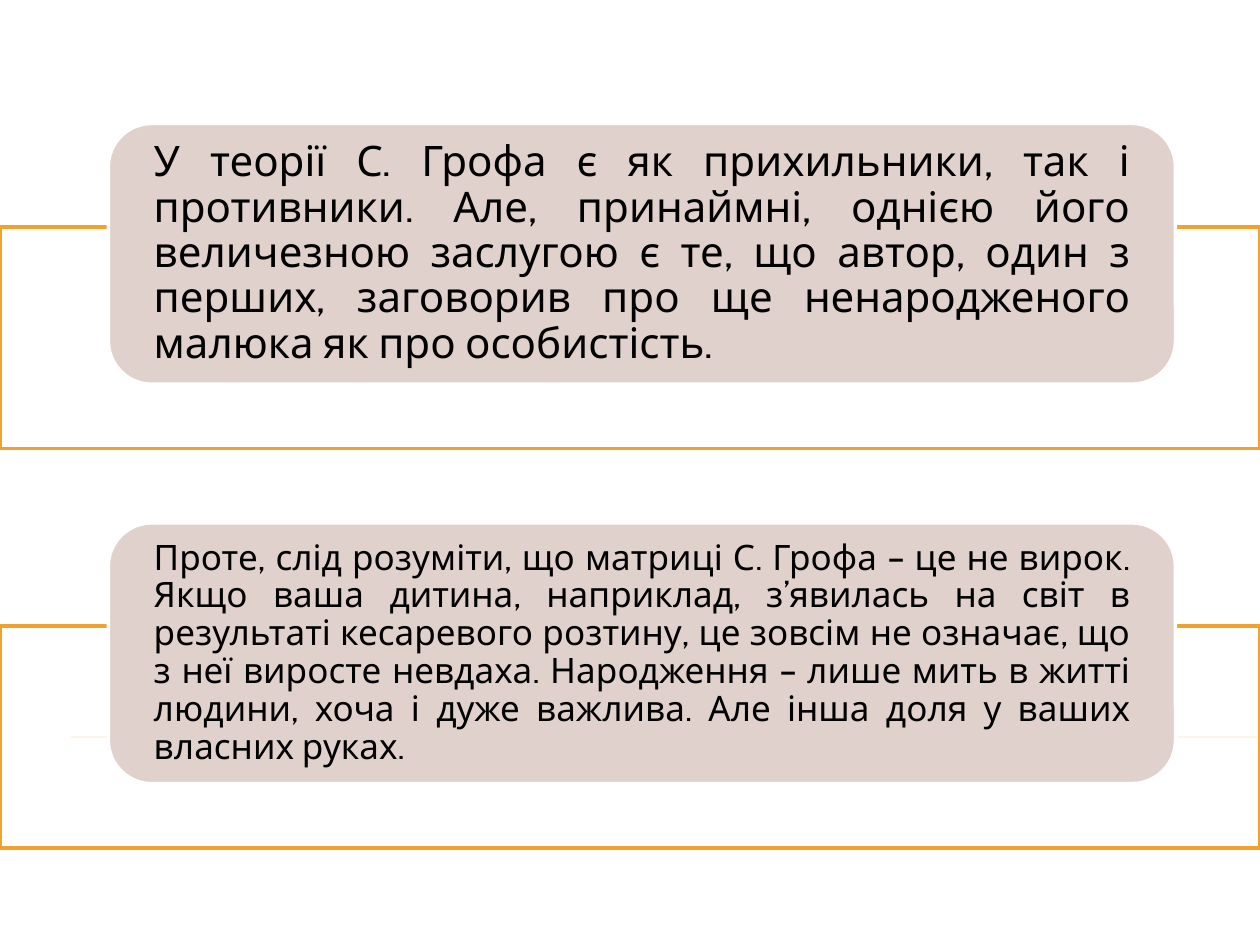
from dataclasses import dataclass

from lxml import etree
from pptx import Presentation
from pptx.dml.color import RGBColor
from pptx.enum.shapes import MSO_CONNECTOR, MSO_SHAPE
from pptx.enum.text import MSO_ANCHOR, PP_ALIGN
from pptx.oxml.ns import qn
from pptx.shapes.autoshape import Shape
from pptx.slide import Slide
from pptx.util import Inches, Pt

RECTANGLE = MSO_SHAPE.RECTANGLE
ROUNDED = MSO_SHAPE.ROUNDED_RECTANGLE
STRAIGHT = MSO_CONNECTOR.STRAIGHT
MIDDLE = MSO_ANCHOR.MIDDLE
JUSTIFY = PP_ALIGN.JUSTIFY

ORANGE = RGBColor(0xF0, 0xA2, 0x2E)
BEIGE = RGBColor(0xE1, 0xD1, 0xCC)
WHITE = RGBColor(0xFF, 0xFF, 0xFF)
BLACK = RGBColor(0x00, 0x00, 0x00)

FONT = "Cabin"
SLIDE_WIDTH, SLIDE_HEIGHT = 10, 7.5

# Row grid, in inches: each row is a label overlapping a frame
FIRST_ROW_TOP = 0.98
ROW_PITCH = 3.17
FRAME_OFFSET, FRAME_HEIGHT = 0.82, 1.76
LABEL_LEFT, LABEL_WIDTH, LABEL_HEIGHT = 0.86, 8.47, 2.07
LABEL_INSET = 0.26
RULE_LEFT, RULE_TOP = 0.56, 5.85


@dataclass(frozen=True)
class Statement:
    text: str
    size: int


STATEMENTS = (
    Statement(
        "У теорії С. Грофа є як прихильники, так і противники. Але, принаймні, "
        "однією його величезною заслугою є те, що автор, один з перших, "
        "заговорив про ще ненародженого малюка як про особистість.",
        24,
    ),
    Statement(
        "Проте, слід розуміти, що матриці С. Грофа – це не вирок. Якщо ваша "
        "дитина, наприклад, з’явилась на світ в результаті кесаревого розтину, "
        "це зовсім не означає, що з неї виросте невдаха. Народження – лише мить "
        "в житті людини, хоча і дуже важлива. Але інша доля у ваших власних руках.",
        20,
    ),
)


def add_box(slide: Slide, kind: MSO_SHAPE, left: float, top: float, width: float,
            height: float, fill: RGBColor, line: RGBColor) -> Shape:
    shape = slide.shapes.add_shape(
        kind, Inches(left), Inches(top), Inches(width), Inches(height))
    shape.shadow.inherit = False
    shape.fill.solid()
    shape.fill.fore_color.rgb = fill
    shape.line.color.rgb = line
    shape.line.width = Pt(2)
    return shape


def set_opacity(shape: Shape, percent: int) -> None:
    color = shape.fill._xPr.find(f"{qn('a:solidFill')}/{qn('a:srgbClr')}")
    etree.SubElement(color, qn("a:alpha")).set("val", str(percent * 1000))


def add_rule(slide: Slide) -> None:
    rule = slide.shapes.add_connector(
        STRAIGHT, Inches(RULE_LEFT), Inches(RULE_TOP),
        Inches(SLIDE_WIDTH), Inches(RULE_TOP))
    rule.line.color.rgb = ORANGE
    rule.line.width = Pt(0.75)
    etree.SubElement(rule._element.spPr, qn("a:effectLst"))


def write_statement(label: Shape, statement: Statement) -> None:
    frame = label.text_frame
    frame.word_wrap = True
    frame.vertical_anchor = MIDDLE
    frame.margin_left = frame.margin_right = Inches(LABEL_INSET)
    frame.margin_top = frame.margin_bottom = 0
    paragraph = frame.paragraphs[0]
    paragraph.alignment = JUSTIFY
    paragraph.line_spacing = 0.9
    run = paragraph.add_run()
    run.text = statement.text
    run.font.name = FONT
    run.font.size = Pt(statement.size)
    run.font.color.rgb = BLACK


def add_row(slide: Slide, row: int, statement: Statement) -> None:
    top = FIRST_ROW_TOP + row * ROW_PITCH
    frame = add_box(slide, RECTANGLE, 0, top + FRAME_OFFSET, SLIDE_WIDTH,
                    FRAME_HEIGHT, WHITE, ORANGE)
    set_opacity(frame, 90)
    label = add_box(slide, ROUNDED, LABEL_LEFT, top, LABEL_WIDTH,
                    LABEL_HEIGHT, BEIGE, WHITE)
    write_statement(label, statement)


def main() -> None:
    presentation = Presentation()
    presentation.slide_width = Inches(SLIDE_WIDTH)
    presentation.slide_height = Inches(SLIDE_HEIGHT)
    slide = presentation.slides.add_slide(presentation.slide_layouts[6])

    # Thin rule behind the rows
    add_rule(slide)

    # Framed statements
    for row, statement in enumerate(STATEMENTS):
        add_row(slide, row, statement)

    presentation.save("out.pptx")


if __name__ == "__main__":
    main()
